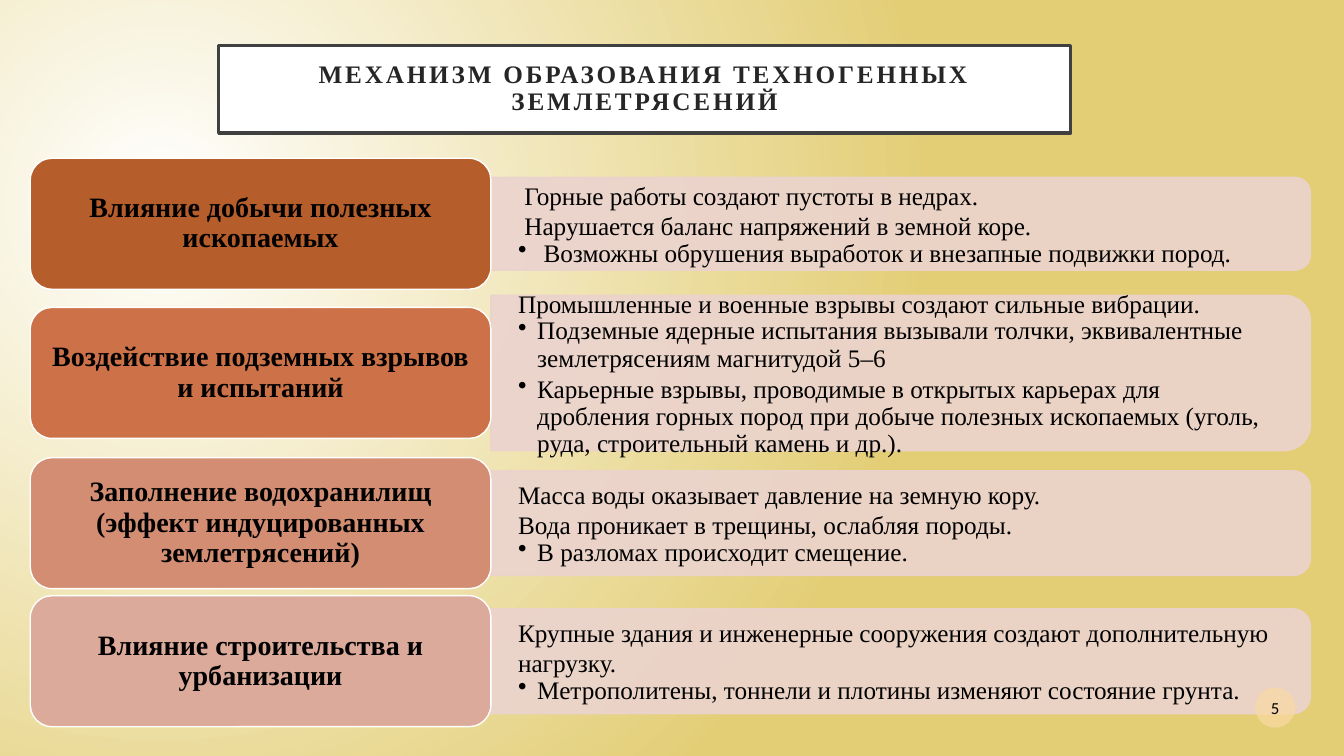
from lxml import etree
from pptx import Presentation, util as u
from pptx.dml.color import RGBColor
from pptx.enum import shapes, text
from pptx.oxml import ns

COLORS = {
    "white": "FFFFFF", "sand": "E3CE76", "frame": "404040", "title": "262626",
    "black": "000000", "bar": "EBD3CE", "badge": "FBDAA5",
    "rust": "B65D2C", "copper": "CC7148", "clay": "D28D73", "blush": "DBAA9B",
}
COLS, ROWS = 133.33, 75
CARD_LEFT, CARD_W, CARD_H = 3, 45.7, 13
BAR_W = 81.3

# card top, card colour, bar height, heading, plain lines, bulleted lines
CAUSES = [
    (15.7, "rust", 9.2, "Влияние добычи полезных ископаемых",
     [" Горные работы создают пустоты в недрах.",
      " Нарушается баланс напряжений в земной коре."],
     [" Возможны обрушения выработок и внезапные подвижки пород."]),
    (30.5, "copper", 15.4, "Воздействие подземных взрывов и испытаний",
     ["Промышленные и военные взрывы создают сильные вибрации."],
     ["Подземные ядерные испытания вызывали толчки, эквивалентные "
      "землетрясениям магнитудой 5–6",
      "Карьерные взрывы, проводимые в открытых карьерах для дробления горных "
      "пород при добыче полезных ископаемых (уголь, руда, строительный камень и др.)."]),
    (45.4, "clay", 10.4, "Заполнение водохранилищ (эффект индуцированных землетрясений)",
     ["Масса воды оказывает давление на земную кору.",
      "Вода проникает в трещины, ослабляя породы."],
     ["В разломах происходит смещение."]),
    (59.1, "blush", 10.4, "Влияние строительства и урбанизации",
     ["Крупные здания и инженерные сооружения создают дополнительную нагрузку."],
     ["Метрополитены, тоннели и плотины изменяют состояние грунта."]),
]


class Deck:
    """Slide style and drawing methods; lengths are grid columns and rows."""

    def __init__(self):
        self.prs = Presentation()
        self.prs.slide_width, self.prs.slide_height = u.Inches(13.33), u.Inches(7.5)
        self.s = self.prs.slides.add_slide(self.prs.slide_layouts[6])
        self.font = "Times New Roman"

    def x(self, cols):
        return round(self.prs.slide_width * cols / COLS)

    def y(self, rows):
        return round(self.prs.slide_height * rows / ROWS)

    def box(self, left, top, w, h):
        return self.x(left), self.y(top), self.x(w), self.y(h)

    def rgb(self, name):
        return RGBColor.from_string(COLORS[name])

    def background(self, inner, outer):
        fill = self.s.background.fill
        fill.gradient()
        for stop, name in zip(fill.gradient_stops, (inner, outer)):
            stop.color.rgb = self.rgb(name)
        grad = self.s.element.find(".//" + ns.qn("a:gradFill"))
        grad.remove(grad.find(ns.qn("a:lin")))
        circle = etree.SubElement(grad, ns.qn("a:path"))
        circle.set("path", "circle")
        focus = etree.SubElement(circle, ns.qn("a:fillToRect"))
        for side, share in zip("ltrb", (50, 55, 125, 100)):
            focus.set(side, str(share * 1000))

    def shape(self, kind, left, top, w, h, fill, line=None, weight=1, opacity=100):
        sp = self.s.shapes.add_shape(kind, *self.box(left, top, w, h))
        sp.shadow.inherit = False
        sp.fill.solid()
        sp.fill.fore_color.rgb = self.rgb(fill)
        if line:
            sp.line.color.rgb = self.rgb(line)
            sp.line.width = u.Pt(weight)
        else:
            sp.line.fill.background()
        if opacity < 100:
            for color in sp.element.spPr.iter(ns.qn("a:srgbClr")):
                etree.SubElement(color, ns.qn("a:alpha")).set("val", str(opacity * 1000))
        return sp

    def frame(self, sp, side, end):
        """Prepare a wrapped, vertically centred text frame."""
        tf = sp.text_frame
        tf.word_wrap = True
        tf.vertical_anchor = text.MSO_ANCHOR.MIDDLE
        tf.margin_left = tf.margin_right = self.x(side)
        tf.margin_top = tf.margin_bottom = self.y(end)
        return tf

    def style(self, p, size, color="black", bold=False, font=None):
        for r in p.runs:
            r.font.name, r.font.size, r.font.bold = font or self.font, u.Pt(size), bold
            r.font.color.rgb = self.rgb(color)

    def label(self, sp, words, size, side, end, spacing=0.9, **look):
        tf = self.frame(sp, side, end)
        tf.text = words
        p = tf.paragraphs[0]
        p.alignment, p.line_spacing = text.PP_ALIGN.CENTER, spacing
        self.style(p, size, **look)
        return p

    def title(self, words):
        sp = self.shape(shapes.MSO_SHAPE.RECTANGLE, 21.7, 4.5, 84.5, 8.7,
                        "white", "frame", 2.5)
        p = self.label(sp, words, 18, 2, 2, color="title", bold=True)
        for r in p.runs:
            r.font._element.set("spc", "200")

    def bar(self, left, middle, w, h):
        """Draw a bar rounded on its right end by turning a tall shape."""
        sp = self.shape(shapes.MSO_SHAPE.ROUND_2_SAME_RECTANGLE,
                        left + (w - h) / 2, middle - w / 2, h, w,
                        "bar", "bar", opacity=90)
        sp.rotation = 90

    def bullet(self, p):
        p.line_spacing, p.space_after = 0.9, u.Pt(2.7)
        pPr = p._p.get_or_add_pPr()
        pPr.set("marL", str(self.x(1.9)))
        pPr.set("indent", str(-self.x(1.9)))
        etree.SubElement(pPr, ns.qn("a:buChar")).set("char", "•")

    def details(self, left, middle, w, h, plain, bulleted):
        sp = self.s.shapes.add_textbox(*self.box(left, middle - h / 2, w, h))
        tf = self.frame(sp, 2.7, 0)
        tf.text = "\n".join(plain + bulleted)
        for i, p in enumerate(tf.paragraphs):
            self.style(p, 18)
            if i >= len(plain):
                self.bullet(p)

    def cause(self, top, color, bar_h, heading, plain, bulleted):
        left, middle = CARD_LEFT + CARD_W, top + CARD_H / 2
        self.bar(left, middle, BAR_W, bar_h)
        self.details(left, middle, BAR_W - 0.7, bar_h - 1, plain, bulleted)
        card = self.shape(shapes.MSO_SHAPE.ROUNDED_RECTANGLE,
                          CARD_LEFT, top, CARD_W, CARD_H, color, "white")
        self.label(card, heading, 20, 0.8, 0.4, bold=True)

    def page_badge(self, number):
        sp = self.shape(shapes.MSO_SHAPE.OVAL, 124.5, 68.2, 4, 4, "badge", opacity=70)
        self.label(sp, number, 12, 0.2, 0.5, spacing=1, font="Calibri")


def main():
    deck = Deck()
    deck.background("white", "sand")
    deck.title("МЕХАНИЗМ ОБРАЗОВАНИЯ ТЕХНОГЕННЫХ ЗЕМЛЕТРЯСЕНИЙ")
    for cause in CAUSES:
        deck.cause(*cause)
    deck.page_badge("5")
    deck.prs.save("out.pptx")


if __name__ == "__main__":
    main()
